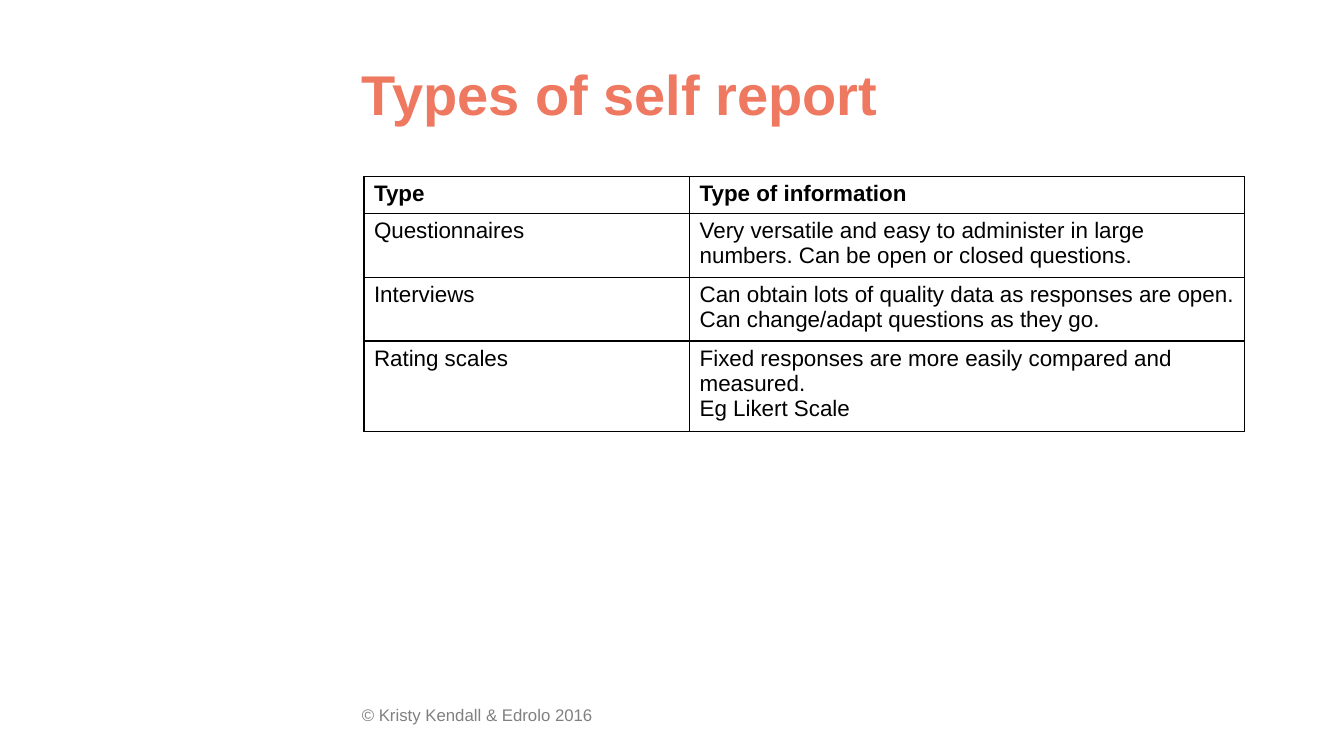
from pptx import Presentation
from pptx.dml.color import RGBColor
from pptx.enum.text import MSO_ANCHOR, PP_ALIGN
from pptx.oxml import parse_xml
from pptx.oxml.ns import nsdecls
from pptx.util import Inches, Pt

CORAL = RGBColor(0xEE, 0x78, 0x60)
BLACK = RGBColor(0, 0, 0)
GREY = RGBColor(0x80, 0x80, 0x80)

ROWS = [
    ("Type", "Type of information"),
    ("Questionnaires", "Very versatile and easy to administer in large numbers. "
     "Can be open or closed questions."),
    ("Interviews", "Can obtain lots of quality data as responses are open. "
     "Can change/adapt questions as they go."),
    ("Rating scales", "Fixed responses are more easily compared and measured.\n"
     "Eg Likert Scale"),
]
WIDTHS = (3.23, 5.5)
HEIGHTS = (0.35, 0.59, 0.59, 0.84)


class Page:
    """Holds the slide and its text style."""

    def __init__(self, deck):
        self.slide = deck.slides.add_slide(deck.slide_layouts[5])
        self.font = "Arial"

    def put_text(self, frame, text, size, color, bold=False):
        frame.text = text
        frame.word_wrap = True
        style = {"name": self.font, "size": Pt(size), "bold": bold}
        for para in frame.paragraphs:
            para.alignment = PP_ALIGN.LEFT
            for key, value in style.items():
                setattr(para.font, key, value)
            para.font.color.rgb = color

    def title(self, text, left, top, width, height):
        shape = self.slide.shapes.title
        place = {"left": left, "top": top, "width": width, "height": height}
        for key, value in place.items():
            setattr(shape, key, Inches(value))
        self.put_text(shape.text_frame, text, 40, CORAL, True)
        shape.text_frame.vertical_anchor = MSO_ANCHOR.MIDDLE

    def label(self, text, *place):
        box = self.slide.shapes.add_textbox(*map(Inches, place))
        self.put_text(box.text_frame, text, 12, GREY)

    def border(self, cell):
        props = cell._tc.get_or_add_tcPr()
        for spot, side in enumerate(("lnL", "lnR", "lnT", "lnB")):
            props.insert(spot, parse_xml(
                f'<a:{side} {nsdecls("a")} w="{Pt(1)}"><a:solidFill>'
                f'<a:srgbClr val="{BLACK}"/></a:solidFill></a:{side}>'))

    def table(self, rows, left, top):
        size = (left, top, sum(WIDTHS), sum(HEIGHTS))
        grid = self.slide.shapes.add_table(
            len(rows), len(WIDTHS), *map(Inches, size)).table
        grid.horz_banding = False
        for col, width in zip(grid.columns, WIDTHS):
            col.width = Inches(width)
        for r, (row, height) in enumerate(zip(rows, HEIGHTS)):
            grid.rows[r].height = Inches(height)
            for c, text in enumerate(row):
                cell = grid.cell(r, c)
                cell.fill.background()
                self.put_text(cell.text_frame, text, 16, BLACK, r == 0)
                self.border(cell)


def main():
    deck = Presentation()
    deck.slide_width, deck.slide_height = Inches(13.33), Inches(7.5)
    page = Page(deck)

    # Footer
    page.label("© Kristy Kendall & Edrolo 2016", 3.49, 6.94, 4.5, 0.4)
    # Table of report types
    page.table(ROWS, 3.61, 1.75)
    # Heading
    page.title("Types of self report", 3.49, 0.3, 9.17, 1.25)

    deck.save("out.pptx")


if __name__ == "__main__":
    main()
